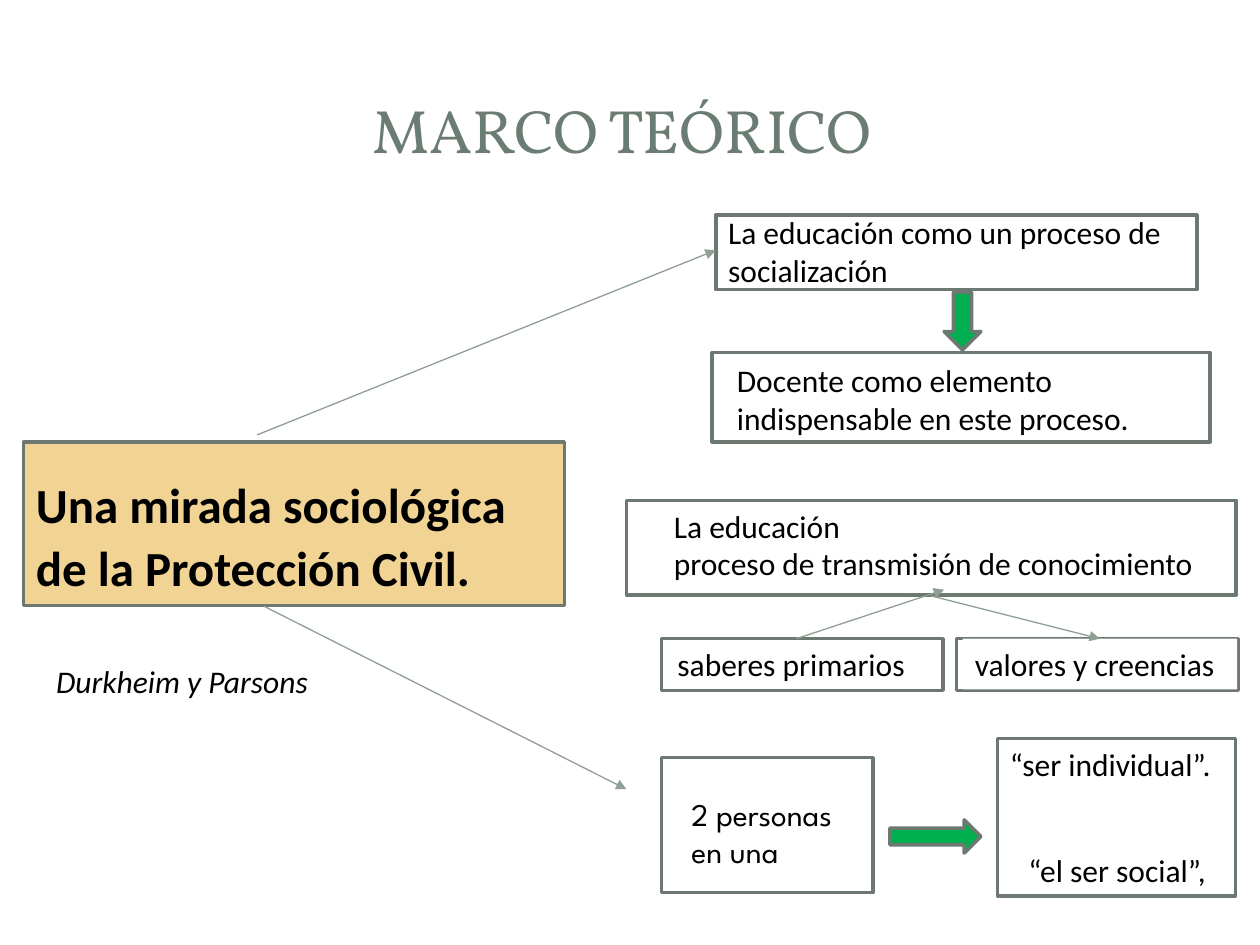
from lxml import etree
from pptx import Presentation
from pptx import util as u
from pptx.dml.color import RGBColor
from pptx.enum import shapes, text
from pptx.oxml import ns

KIND = shapes.MSO_SHAPE


def tint(code):
    return RGBColor.from_string(code)


def write(frame, words, font="Calibri", size=18, color="000000", bold=False,
          slant=False, wrap=True, align=text.PP_ALIGN.LEFT,
          anchor=text.MSO_ANCHOR.TOP, fit=text.MSO_AUTO_SIZE.SHAPE_TO_FIT_TEXT,
          lead=None, above=None):
    """Fill a text frame, one paragraph for each line of words."""
    frame.word_wrap = wrap
    frame.auto_size = fit
    frame.vertical_anchor = anchor
    frame.text = words
    for para in frame.paragraphs:
        para.alignment = align
        if lead:
            para.line_spacing = lead
        if above is not None:
            para.space_before = u.Pt(above)
        for run in para.runs:
            face = run.font
            face.name, face.size = font, u.Pt(size)
            face.bold, face.italic = bold, slant
            face.color.rgb = tint(color)


class Board:
    edge, wire, thick, thin = "6D7871", "8F9F96", 2, 0.75

    def __init__(self, slide):
        self.slide = slide
        self.items = slide.shapes

    def title(self, words, *area):
        head = self.items.title
        head.left, head.top, head.width, head.height = map(u.Pt, area)
        write(head.text_frame, words, font="Vollkorn", size=35, color="6B7D72",
              align=text.PP_ALIGN.CENTER, anchor=text.MSO_ANCHOR.MIDDLE,
              fit=text.MSO_AUTO_SIZE.NONE)

    def box(self, *area, kind=KIND.RECTANGLE, fill="FFFFFF"):
        item = self.items.add_shape(kind, *map(u.Pt, area))
        item.shadow.inherit = False
        item.fill.solid()
        item.fill.fore_color.rgb = tint(fill)
        item.line.color.rgb = tint(self.edge)
        item.line.width = u.Pt(self.thick)

    def label(self, words, *area, fill=None, **style):
        item = self.items.add_textbox(*map(u.Pt, area))
        if fill:
            item.fill.solid()
            item.fill.fore_color.rgb = tint(fill)
        write(item.text_frame, words, **style)

    def arrow(self, *ends):
        item = self.items.add_connector(shapes.MSO_CONNECTOR.STRAIGHT,
                                        *map(u.Pt, ends))
        item.line.color.rgb = tint(self.wire)
        item.line.width = u.Pt(self.thin)
        tip = etree.SubElement(item.line._get_or_add_ln(), ns.qn("a:tailEnd"))
        tip.set("type", "triangle")
        etree.SubElement(item._element.spPr, ns.qn("a:effectLst"))


def main():
    deck = Presentation()
    deck.slide_width, deck.slide_height = u.Pt(720), u.Pt(540)
    board = Board(deck.slides.add_slide(deck.slide_layouts[5]))

    # Frames behind the texts
    for area in [(570, 422, 136, 90), (378, 433, 121, 77),
                 (546.5, 365, 161, 29.5), (378, 365, 161, 29.5),
                 (358, 286, 348.5, 54), (407, 201.5, 284.5, 51),
                 (409, 123, 275, 42.5)]:
        board.box(*area)
    board.box(13.5, 252.5, 309, 93.5, fill="F1D394")

    # Title and main topic
    board.title("MARCO TEÓRICO ", 34, 32.5, 650, 82)
    board.label("Una mirada sociológica de la Protección Civil.",
                13.5, 265.5, 304.5, 78.5, size=28, bold=True,
                lead=1.07, above=10)
    board.label("Durkheim y Parsons", 25, 375, 160.5, 29,
                slant=True, wrap=False)

    # Education as socialization
    board.label("La educación como un proceso de socialización",
                409, 118, 279.5, 51)
    board.label("Docente como elemento indispensable en este proceso.",
                414, 203, 270.5, 51)

    # Education as transmission of knowledge
    board.label("La educación\nproceso de transmisión de conocimiento",
                378, 286, 322.5, 51, wrap=False)
    board.label("saberes primarios", 380, 365, 150, 29, wrap=False)
    board.label("valores y creencias", 550, 365, 157, 29,
                fill="FFFFFF", wrap=False)

    # Two persons in one
    board.label("“ser individual”.", 570, 422, 130.5, 29, wrap=False)
    board.label("“el ser social”,", 580.5, 482.5, 121, 29, wrap=False)
    board.label("2 personas en una", 388, 450.5, 111, 51,
                font="League Spartan")

    # Thin arrows and block arrows
    for ends in [(147, 248.5, 409, 143), (151, 346.5, 358, 451),
                 (455, 365, 539.5, 337), (532, 340.5, 628.5, 365)]:
        board.arrow(*ends)
    board.box(539.5, 167, 21, 33, kind=KIND.DOWN_ARROW, fill="00B050")
    board.box(508.5, 468.5, 52, 19, kind=KIND.RIGHT_ARROW, fill="00B050")

    deck.save("out.pptx")


if __name__ == "__main__":
    main()
